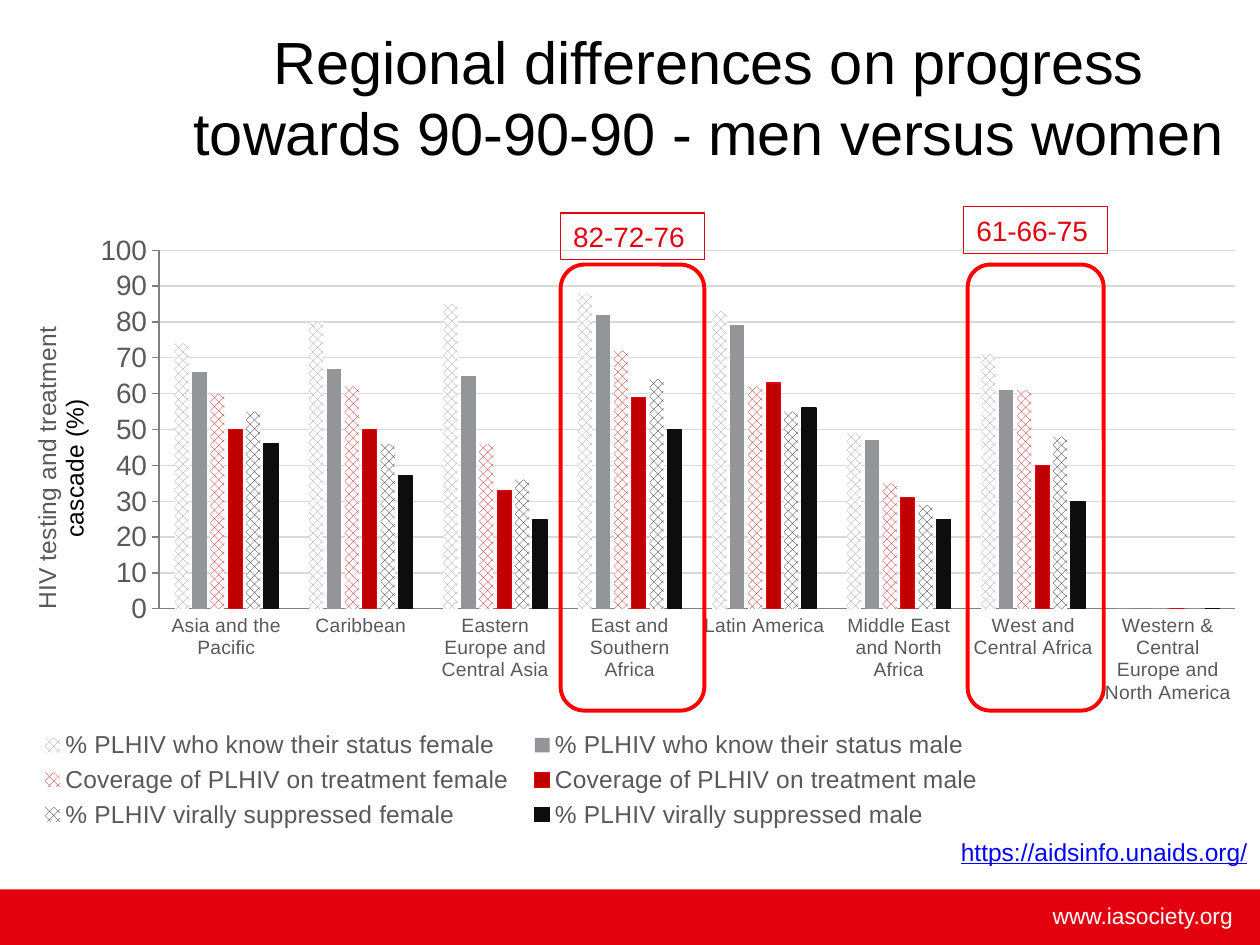
import pptx
import pptx.chart.data
import pptx.dml.color
import pptx.enum.chart
import pptx.enum.dml
import pptx.enum.shapes
import pptx.enum.text
import pptx.oxml
import pptx.oxml.ns
import pptx.util
from pptx.util import Inches, Pt

FONT = "Arial"
COLORS = {
    "white": "FFFFFF", "black": "000000", "brand": "E3000F", "outline": "FF0000",
    "link": "0000FF", "label": "595959", "axis": "808080", "grid": "D9D9D9",
    "status": "939598", "treatment": "C00000", "suppressed": "0D0D0D",
}
TITLE = "Regional differences on progress towards 90-90-90 - men versus women"
AXIS_TITLE = [("HIV testing and treatment", "label"), ("cascade (%)", "black")]
REGIONS = [
    "Asia and the Pacific", "Caribbean", "Eastern Europe and Central Asia",
    "East and Southern Africa", "Latin America", "Middle East and North Africa",
    "West and Central Africa", "Western & Central Europe and North America",
]
# name, values by region, colour, hatched, outline
SERIES = [
    ("% PLHIV who know their status female",
     (74, 80, 85, 88, 83, 49, 71, 0), "status", True, None),
    ("% PLHIV who know their status male",
     (66, 67, 65, 82, 79, 47, 61, 0), "status", False, None),
    ("Coverage of PLHIV on treatment female",
     (60, 62, 46, 72, 62, 35, 61, 0), "treatment", True, None),
    ("Coverage of PLHIV on treatment male",
     (50, 50, 33, 59, 63, 31, 40, 0), "treatment", False, "brand"),
    ("% PLHIV virally suppressed female",
     (55, 46, 36, 64, 55, 29, 48, 0), "suppressed", True, None),
    ("% PLHIV virally suppressed male",
     (46, 37, 25, 50, 56, 25, 30, 0), "suppressed", False, "suppressed"),
]
HIGHLIGHTS = [(4.45, 2.1, 1.14, 3.54), (7.68, 2.1, 1.08, 3.54)]
CALLOUTS = [("82-72-76", (4.45, 1.69, 1.14, 0.37)),
            ("61-66-75", (7.65, 1.64, 1.14, 0.37))]
SHAPES = pptx.enum.shapes.MSO_SHAPE
ALIGN = pptx.enum.text.PP_ALIGN


def rgb(name):
    return pptx.dml.color.RGBColor.from_string(COLORS[name])


def style_font(font, size, color):
    font.name = FONT
    font.size = Pt(size)
    font.bold = False
    font.color.rgb = rgb(color)


def style_line(line, color, width=0.75):
    line.color.rgb = rgb(color)
    line.width = Pt(width)


def write_text(shape, text, size, color, align):
    shape.text_frame.text = text
    paragraph = shape.text_frame.paragraphs[0]
    paragraph.alignment = align
    style_font(paragraph.font, size, color)
    return paragraph


def add_text(slide, text, box, size, color, align):
    shape = slide.shapes.add_textbox(*map(Inches, box))
    shape.text_frame.word_wrap = True
    return write_text(shape, text, size, color, align)


def add_outline(slide, kind, box, color, width):
    shape = slide.shapes.add_shape(kind, *map(Inches, box))
    shape.shadow.inherit = False
    shape.fill.background()
    style_line(shape.line, color, width)
    return shape


def set_layout(parent, after, **settings):
    """Place a chart part by fractions, after the named child (or first)."""
    for old in parent.findall(pptx.oxml.ns.qn("c:layout")):
        parent.remove(old)
    items = "".join(f'<c:{key} val="{value}"/>' for key, value in settings.items())
    layout = pptx.oxml.parse_xml(
        f'<c:layout {pptx.oxml.ns.nsdecls("c")}><c:manualLayout>{items}'
        "</c:manualLayout></c:layout>")
    if after:
        parent.find(pptx.oxml.ns.qn(after)).addnext(layout)
    else:
        parent.insert(0, layout)


def style_axes(chart):
    category_axis, value_axis = chart.category_axis, chart.value_axis
    ticks = pptx.enum.chart.XL_TICK_MARK
    for axis, size, tick in ((category_axis, 11, ticks.NONE), (value_axis, 16, ticks.OUTSIDE)):
        axis.major_tick_mark = tick
        axis.minor_tick_mark = ticks.NONE
        style_font(axis.tick_labels.font, size, "label")
        style_line(axis.format.line, "axis")
    value_axis.minimum_scale, value_axis.maximum_scale = 0, 100
    value_axis.major_unit = 10
    value_axis.has_major_gridlines = True
    style_line(value_axis.major_gridlines.format.line, "grid")

    frame = value_axis.axis_title.text_frame
    for index, (text, color) in enumerate(AXIS_TITLE):
        paragraph = frame.add_paragraph() if index else frame.paragraphs[0]
        run = paragraph.add_run()
        run.text = text
        style_font(run.font, 14, color)
    set_layout(value_axis.axis_title.element, "c:tx",
               xMode="edge", yMode="edge", x=0.01, y=0.16)


def add_cascade_chart(slide):
    data = pptx.chart.data.CategoryChartData()
    data.categories = REGIONS
    for name, values, *_ in SERIES:
        data.add_series(name, values)
    chart = slide.shapes.add_chart(
        pptx.enum.chart.XL_CHART_TYPE.COLUMN_CLUSTERED,
        Inches(0.12), Inches(1.78), Inches(9.85), Inches(4.9), data).chart
    chart.has_title = False
    style_font(chart.font, 10, "black")
    plot = chart.plots[0]
    plot.vary_by_categories = False
    plot.gap_width, plot.overlap = 219, -27

    for series, (_, _, color, hatched, outline) in zip(plot.series, SERIES):
        fill = series.format.fill
        if hatched:
            fill.patterned()
            fill.pattern = pptx.enum.dml.MSO_PATTERN.PERCENT_50
            fill.fore_color.rgb = rgb(color)
            fill.back_color.rgb = rgb("white")
        else:
            fill.solid()
            fill.fore_color.rgb = rgb(color)
        if outline:
            style_line(series.format.line, outline)
        else:
            series.format.line.fill.background()

    style_axes(chart)
    chart.has_legend = True
    chart.legend.position = pptx.enum.chart.XL_LEGEND_POSITION.BOTTOM
    chart.legend.include_in_layout = False
    style_font(chart.legend.font, 14, "label")
    chart_element = chart.element.find(pptx.oxml.ns.qn("c:chart"))
    set_layout(chart_element.find(pptx.oxml.ns.qn("c:legend")), "c:legendPos",
               xMode="edge", yMode="edge", x=0.01, y=0.81, w=0.78, h=0.18)
    set_layout(chart_element.find(pptx.oxml.ns.qn("c:plotArea")), None,
               layoutTarget="inner", xMode="edge", yMode="edge",
               x=0.116, y=0.042, w=0.867, h=0.581)


def main():
    presentation = pptx.Presentation()
    presentation.slide_width, presentation.slide_height = Inches(10), Inches(7.5)
    slide = presentation.slides.add_slide(presentation.slide_layouts[5])

    title = slide.shapes.title
    title.left, title.top, title.width, title.height = map(Inches, (1.29, 0.14, 8.67, 1.25))
    title.text_frame.vertical_anchor = pptx.enum.text.MSO_ANCHOR.MIDDLE
    write_text(title, TITLE, 34, "black", ALIGN.CENTER)

    footer = slide.shapes.add_shape(SHAPES.RECTANGLE, *map(Inches, (0, 7.06, 10, 0.44)))
    footer.shadow.inherit = False
    footer.fill.solid()
    footer.fill.fore_color.rgb = rgb("brand")
    footer.line.fill.background()
    add_text(slide, "www.iasociety.org", (6.57, 7.11, 3.31, 0.32), 13, "white", ALIGN.RIGHT)

    add_cascade_chart(slide)
    for box in HIGHLIGHTS:
        add_outline(slide, SHAPES.ROUNDED_RECTANGLE, box, "outline", 2.25)
    for text, box in CALLOUTS:
        callout = add_outline(slide, SHAPES.RECTANGLE, box, "brand", 0.75)
        write_text(callout, text, 16, "brand", ALIGN.LEFT)
    source = add_text(slide, "https://aidsinfo.unaids.org/", (6.88, 6.59, 3.12, 0.34),
                      14, "link", ALIGN.RIGHT)
    source.font.underline = True
    presentation.save("out.pptx")


if __name__ == "__main__":
    main()
